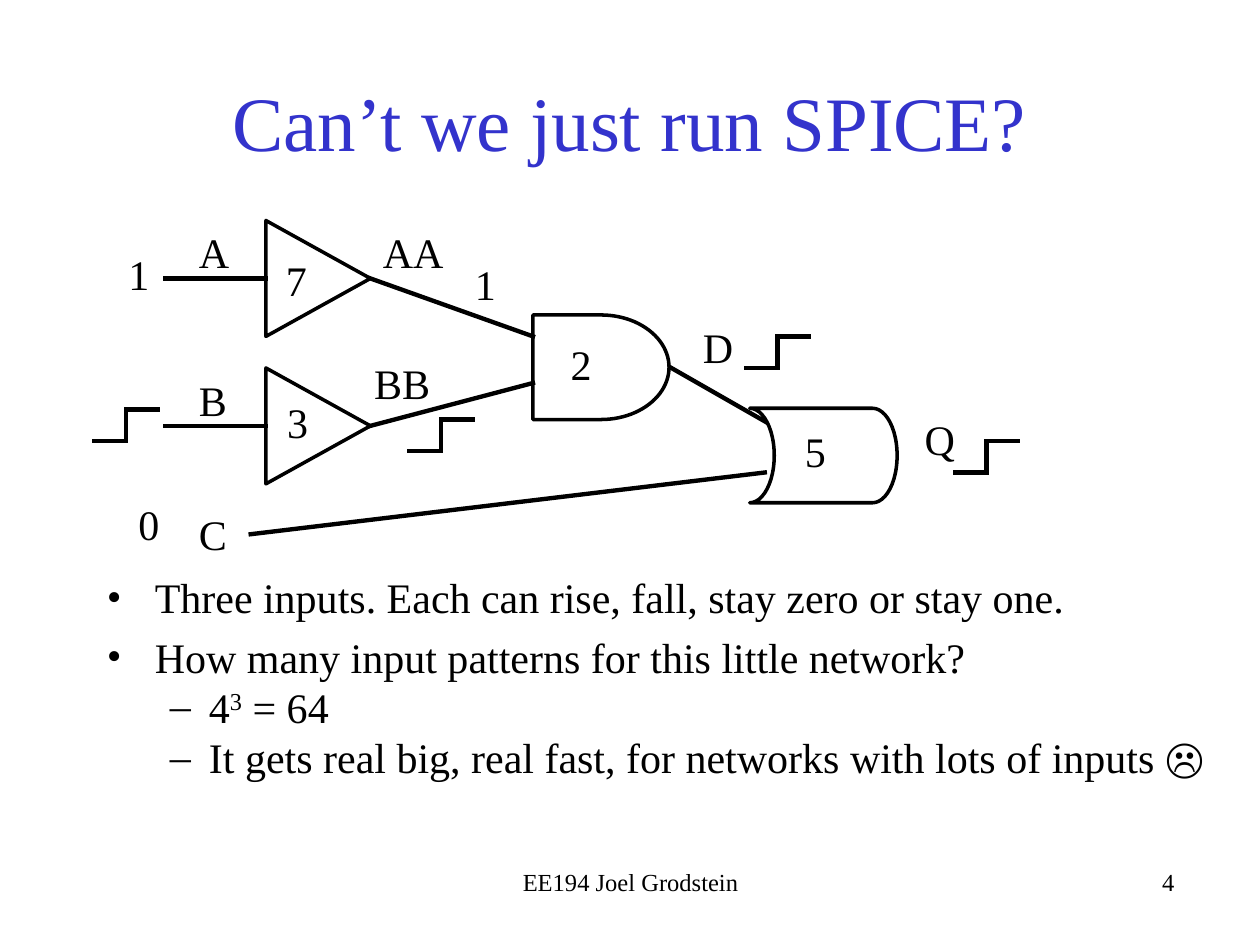
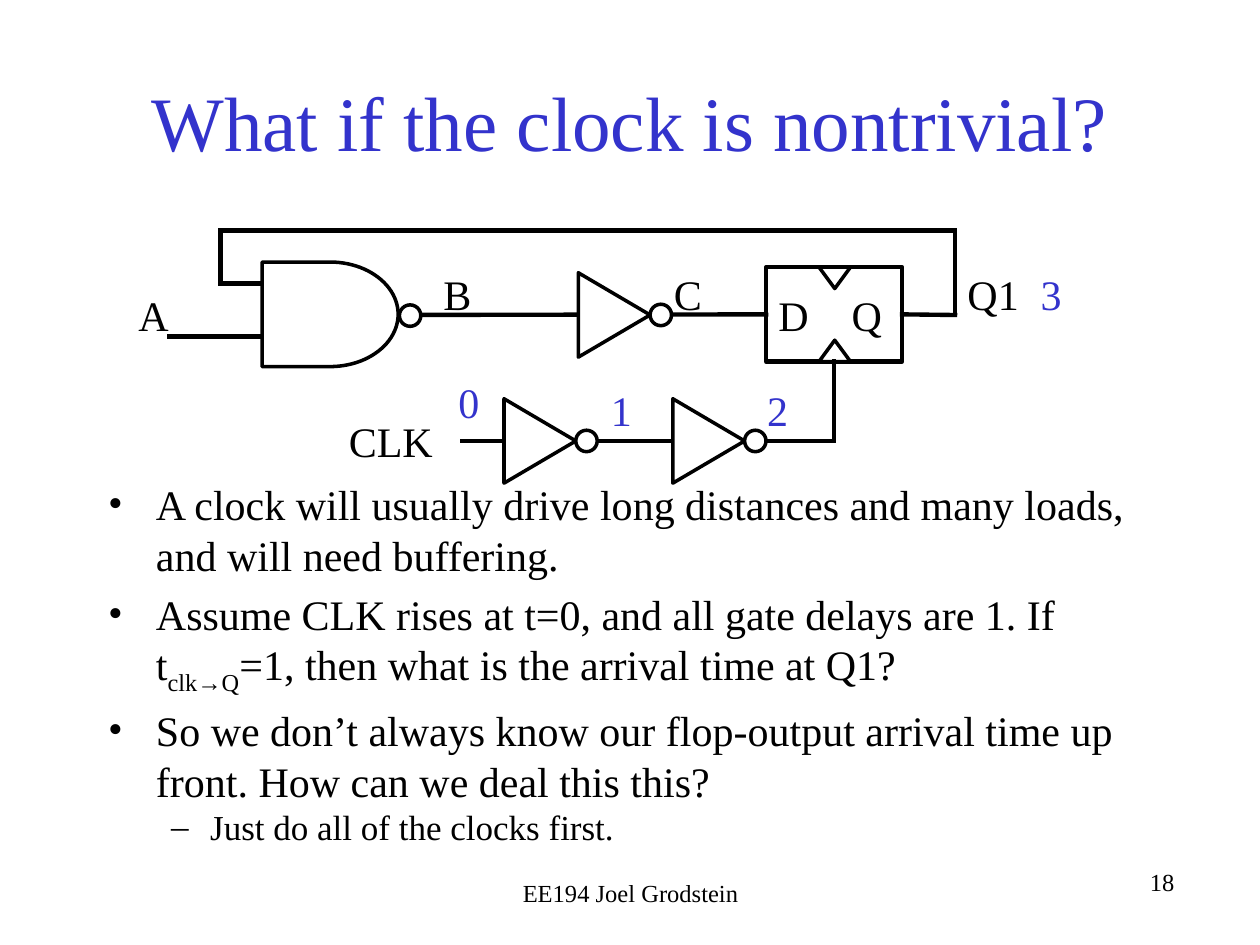
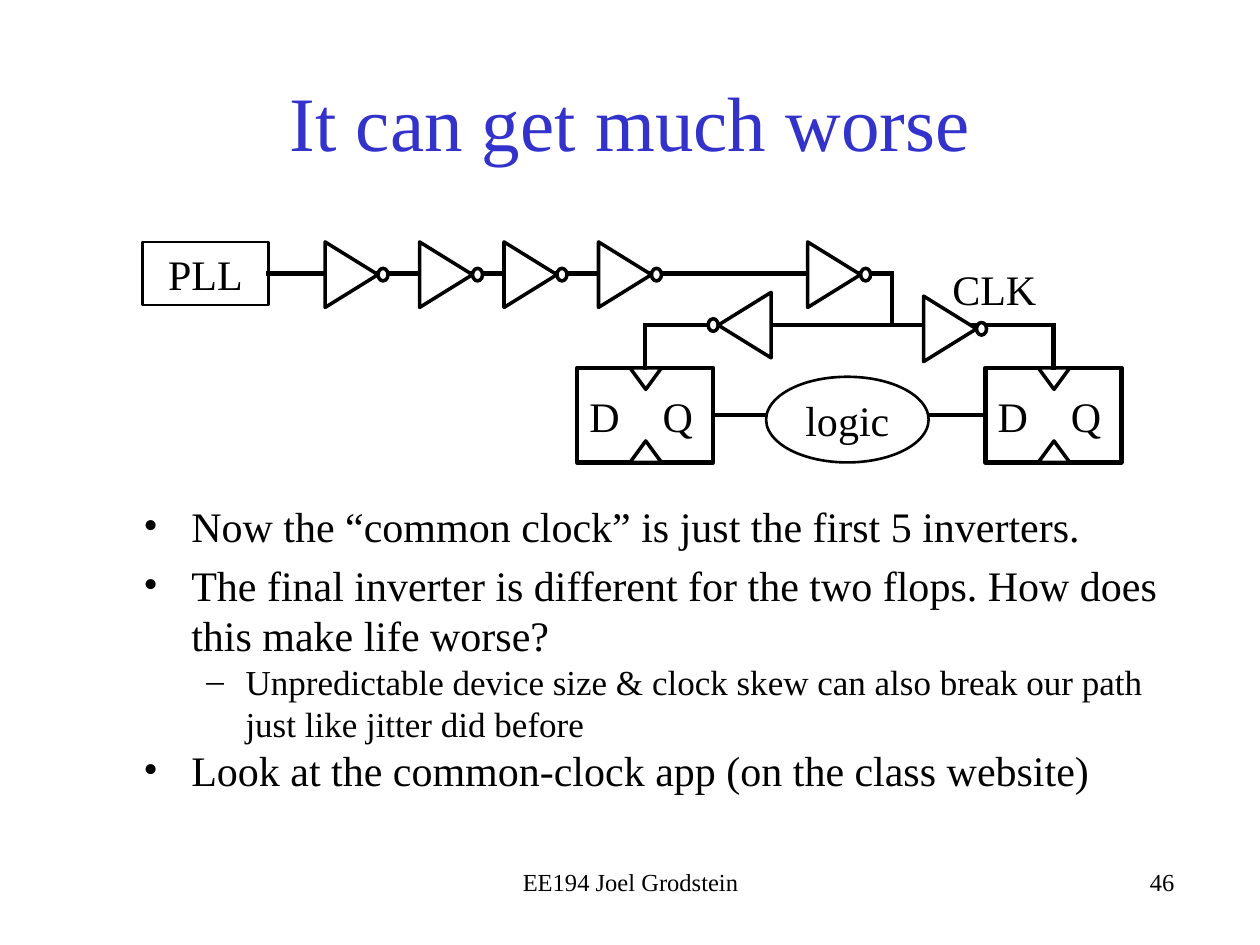
from dataclasses import dataclass
from itertools import pairwise

from lxml.etree import SubElement
from pptx import Presentation
from pptx.dml.color import RGBColor
from pptx.enum.shapes import MSO_CONNECTOR as Connector, MSO_SHAPE as Preset
from pptx.enum.text import MSO_ANCHOR as Anchor, PP_ALIGN as Align
from pptx.oxml.ns import qn
from pptx.slide import Slide
from pptx.util import Inches, Pt

FONT = "Times New Roman"
BLACK, WHITE, BLUE = "000000", "FFFFFF", "3333CC"
TOP, LEFT, BOTTOM, RIGHT = range(4)
TITLE_ONLY = 5
BULLETS = [("•", 0.38, 0.38), ("–", 0.81, 0.31)]
BIG_INVERTER = (0.57, 0.67, 0.17, 0.17)
SMALL_INVERTER = (0.42, 0.52, 0.08, 0.1)


def rgb(value):
    return RGBColor.from_string(value)


def inches(*values):
    return [Inches(value) for value in values]


def style(paragraph, size=24, color=BLACK, align=Align.LEFT):
    paragraph.alignment = align
    paragraph.font.name = FONT
    paragraph.font.size = Pt(size)
    paragraph.font.color.rgb = rgb(color)


def add_text(slide, text, box, **look):
    frame = slide.shapes.add_textbox(*inches(*box)).text_frame
    frame.word_wrap = True
    frame.text = text
    style(frame.paragraphs[0], **look)


def add_bullet(paragraph, level):
    mark, margin, hanging = BULLETS[level]
    paragraph.level = level
    properties = paragraph._p.get_or_add_pPr()
    properties.set("marL", str(Inches(margin)))
    properties.set("indent", str(-Inches(hanging)))
    SubElement(properties, qn("a:buFont"), typeface=FONT)
    SubElement(properties, qn("a:buChar"), char=mark)


def add_body(slide, box, items):
    frame = slide.shapes.add_textbox(*inches(*box)).text_frame
    frame.word_wrap = True
    for number, (level, size, before, runs) in enumerate(items):
        paragraph = frame.add_paragraph() if number else frame.paragraphs[0]
        add_bullet(paragraph, level)
        paragraph.space_before = Pt(before)
        style(paragraph, size)
        for text, baseline in runs:
            run = paragraph.add_run()
            run.text = text
            if baseline:
                run._r.get_or_add_rPr().set("baseline", str(baseline * 1000))


def point(text, before=5):
    return 0, 24, before, [(text, 0)]


def subpoint(text, size=20):
    return 1, size, 0, [(text, 0)]


def add_slide(presentation, title, number, footer_top=6.83):
    slide = presentation.slides.add_slide(presentation.slide_layouts[TITLE_ONLY])
    shape = slide.shapes.title
    shape.left, shape.top, shape.width, shape.height = inches(0.75, 0.33, 8.5, 1.25)
    shape.text_frame.text = title
    shape.text_frame.vertical_anchor = Anchor.MIDDLE
    style(shape.text_frame.paragraphs[0], 44, BLUE, Align.CENTER)
    add_text(slide, "EE194 Joel Grodstein", (3.42, footer_top, 3.17, 0.5), size=14, align=Align.CENTER)
    add_text(slide, str(number), (6.25, 6.83, 3.17, 0.5), size=14, align=Align.RIGHT)
    return slide


@dataclass
class Circuit:
    slide: Slide
    left: float
    top: float

    def label(self, text, x, y, width=0.51, color=BLACK):
        add_text(self.slide, text, (self.left + x, self.top + y, width, 0.5), color=color)

    def symbol(self, preset, x, y, width, height, rotation=0, weight=2):
        box = inches(self.left + x, self.top + y, width, height)
        shape = self.slide.shapes.add_shape(preset, *box)
        shape.shadow.inherit = False
        shape.rotation = rotation
        shape.fill.solid()
        shape.fill.fore_color.rgb = rgb(WHITE)
        shape.line.color.rgb = rgb(BLACK)
        shape.line.width = Pt(weight)
        return shape

    def named_symbol(self, text, preset, *box):
        shape = self.symbol(preset, *box, weight=1.5)
        shape.text_frame.text = text
        style(shape.text_frame.paragraphs[0], align=Align.CENTER)
        return shape

    def wire(self, *points, begin=None, end=None):
        lines = []
        for (x1, y1), (x2, y2) in pairwise(points):
            ends = inches(self.left + x1, self.top + y1, self.left + x2, self.top + y2)
            line = self.slide.shapes.add_connector(Connector.STRAIGHT, *ends)
            line.line.color.rgb = rgb(BLACK)
            line.line.width = Pt(2.5)
            properties = line._element.spPr
            properties.find(qn("a:ln")).set("cap", "sq")
            SubElement(properties, qn("a:effectLst"))
            lines.append(line)
        if begin:
            lines[0].begin_connect(*begin)
        if end:
            lines[-1].end_connect(*end)

    def buffer(self, x, middle, width, height, rotation=90):
        shift = (width - height) / 2
        self.symbol(Preset.ISOSCELES_TRIANGLE, x + shift, middle - width / 2, height, width, rotation)

    def inverter(self, x, middle, size, faces_left=False):
        width, height, bubble_width, bubble_height = size
        if faces_left:
            self.buffer(x + bubble_width, middle, width, height, 270)
        else:
            self.buffer(x, middle, width, height)
        bubble_x = x if faces_left else x + width
        self.symbol(Preset.OVAL, bubble_x, middle - bubble_height / 2, bubble_width, bubble_height)

    def and_gate(self, x, y):
        self.symbol(Preset.FLOWCHART_DELAY, x, y, 1.08, 0.83)

    def flop(self, x, y):
        shape = self.symbol(Preset.RECTANGLE, x, y, 1.08, 0.75, weight=2.5)
        shape.text_frame.text = "D\tQ"
        paragraph = shape.text_frame.paragraphs[0]
        tabs = SubElement(paragraph._p.get_or_add_pPr(), qn("a:tabLst"))
        SubElement(tabs, qn("a:tab"), pos=str(Inches(0.58)), algn="l")
        style(paragraph)
        self.symbol(Preset.ISOSCELES_TRIANGLE, x + 0.42, y + 0.58, 0.25, 0.17)
        self.symbol(Preset.ISOSCELES_TRIANGLE, x + 0.42, y, 0.25, 0.17, 180)
        return shape

    def rising_edge(self, x, y):
        self.wire((x, y), (x + 0.25, y), (x + 0.25, y - 0.25), (x + 0.5, y - 0.25))


def draw_gate_network(slide, left, top):
    circuit = Circuit(slide, left, top)
    circuit.wire((4.56, 1.16), (5.4, 1.64))
    circuit.and_gate(3.48, 0.75)
    circuit.symbol(Preset.FLOWCHART_STORED_DATA, 5.2, 1.49, 1.17, 0.75, 180)
    for middle in (0.46, 1.63):
        circuit.buffer(1.36, middle, 0.83, 0.92)
        circuit.wire((0.56, middle), (1.36, middle))
    circuit.wire((2.19, 0.46), (3.48, 0.92))
    circuit.wire((2.19, 1.63), (3.48, 1.29))
    circuit.wire((1.24, 2.49), (5.32, 2))
    for name, x, y in [("A", 0.73, 0), ("B", 0.73, 1.17), ("C", 0.73, 2.24), ("D", 4.73, 0.75), ("Q", 6.49, 1.48)]:
        circuit.label(name, x, y)
    for name, x, y in [("AA", 2.19, 0), ("BB", 2.12, 1.04)]:
        circuit.label(name, x, y, 0.71)
    for delay, x, y in [("7", 1.42, 0.22), ("3", 1.43, 1.35), ("2", 3.68, 0.89), ("5", 5.54, 1.58)]:
        circuit.label(delay, x, y, 0.58)
    for level, x, y in [("1", 0.17, 0.17), ("1", 2.92, 0.25), ("0", 0.25, 2.16)]:
        circuit.label(level, x, y, 0.33)
    for x, y in [(0, 1.75), (2.5, 1.83), (5.17, 1.17), (6.83, 2)]:
        circuit.rising_edge(x, y)


def draw_buffered_clock(slide, left, top):
    circuit = Circuit(slide, left, top)
    flop = circuit.flop(5.08, 0.29)
    circuit.wire((2.67, 1.67), (5.62, 1.67), (5.62, 1.04), end=(flop, BOTTOM))
    circuit.wire((1.92, 0.67), (5.08, 0.67), end=(flop, LEFT))
    circuit.and_gate(1.08, 0.25)
    circuit.symbol(Preset.OVAL, 2.17, 0.59, 0.17, 0.17)
    for x, middle in [(3.59, 0.67), (3, 1.67), (4.34, 1.67)]:
        circuit.inverter(x, middle, BIG_INVERTER)
    circuit.wire((6.16, 0.67), (6.58, 0.67), (6.58, 0), (0.75, 0), (0.75, 0.42), (1.08, 0.42), begin=(flop, RIGHT))
    circuit.wire((0.34, 0.84), (1.08, 0.84))
    for name, x, y in [("CLK", 1.67, 1.42), ("Q1", 6.58, 0.25), ("A", 0, 0.42), ("B", 2.42, 0.25), ("C", 4.25, 0.25)]:
        circuit.label(name, x, y, 0.92)
    for arrival, x, y in [("0", 2.54, 1.11), ("1", 3.75, 1.17), ("2", 4.99, 1.17), ("3", 7.16, 0.25)]:
        circuit.label(arrival, x, y, 0.59, BLUE)


def draw_clock_tree(slide, left, top):
    circuit = Circuit(slide, left, top)
    launch, capture = [circuit.flop(x, 1) for x in (3.45, 6.69)]
    circuit.wire((4.53, 1.38), (6.69, 1.38), begin=(launch, RIGHT), end=(capture, LEFT))
    circuit.named_symbol("logic", Preset.OVAL, 4.95, 1.07, 1.29, 0.68)
    source = circuit.named_symbol("PLL", Preset.RECTANGLE, 0, 0, 1, 0.5)
    circuit.wire((1, 0.25), (5.95, 0.25), (5.95, 0.66), begin=(source, RIGHT))
    circuit.wire((3.99, 1), (3.99, 0.66), (7.23, 0.66), (7.23, 1), begin=(launch, TOP), end=(capture, TOP))
    for x in (1.45, 2.2, 2.87, 3.62, 5.28):
        circuit.inverter(x, 0.26, SMALL_INVERTER)
    circuit.inverter(6.2, 0.69, SMALL_INVERTER)
    circuit.inverter(4.49, 0.66, SMALL_INVERTER, faces_left=True)
    circuit.label("CLK", 6.33, 0.12, 0.88)


def main():
    presentation = Presentation()
    presentation.slide_width, presentation.slide_height = inches(10, 7.5)

    slide = add_slide(presentation, "Can’t we just run SPICE?", 4)
    draw_gate_network(slide, 0.75, 1.75)
    add_body(slide, (0.75, 4.49, 8.92, 1.93), [
        point("Three inputs. Each can rise, fall, stay zero or stay one."),
        point("How many input patterns for this little network?"),
        (1, 24, 0, [("4", 0), ("3", 30), (" = 64", 0)]),
        subpoint("It gets real big, real fast, for networks with lots of inputs ☹", 24),
    ])

    slide = add_slide(presentation, "What if the clock is nontrivial?", 18, footer_top=6.92)
    draw_buffered_clock(slide, 1, 1.83)
    add_body(slide, (0.76, 3.75, 8.5, 3.06), [
        point("A clock will usually drive long distances and many loads, and will need buffering."),
        (0, 24, 5, [
            ("Assume CLK rises at t=0, and all gate delays are 1. If t", 0),
            ("clk→Q", -25),
            ("=1, then what is the arrival time at Q1?", 0),
        ]),
        point("So we don’t always know our flop-output arrival time up front. How can we deal this this?"),
        subpoint("Just do all of the clocks first."),
    ])

    slide = add_slide(presentation, "It can get much worse", 46)
    draw_clock_tree(slide, 1.13, 1.92)
    add_body(slide, (1.04, 3.92, 8.55, 2.64), [
        point("Now the “common clock” is just the first 5 inverters."),
        point("The final inverter is different for the two flops. How does this make life worse?"),
        subpoint("Unpredictable device size & clock skew can also break our path just like jitter did before"),
        point("Look at the common-clock app (on the class website)", 0),
    ])

    presentation.save("out.pptx")


if __name__ == "__main__":
    main()
